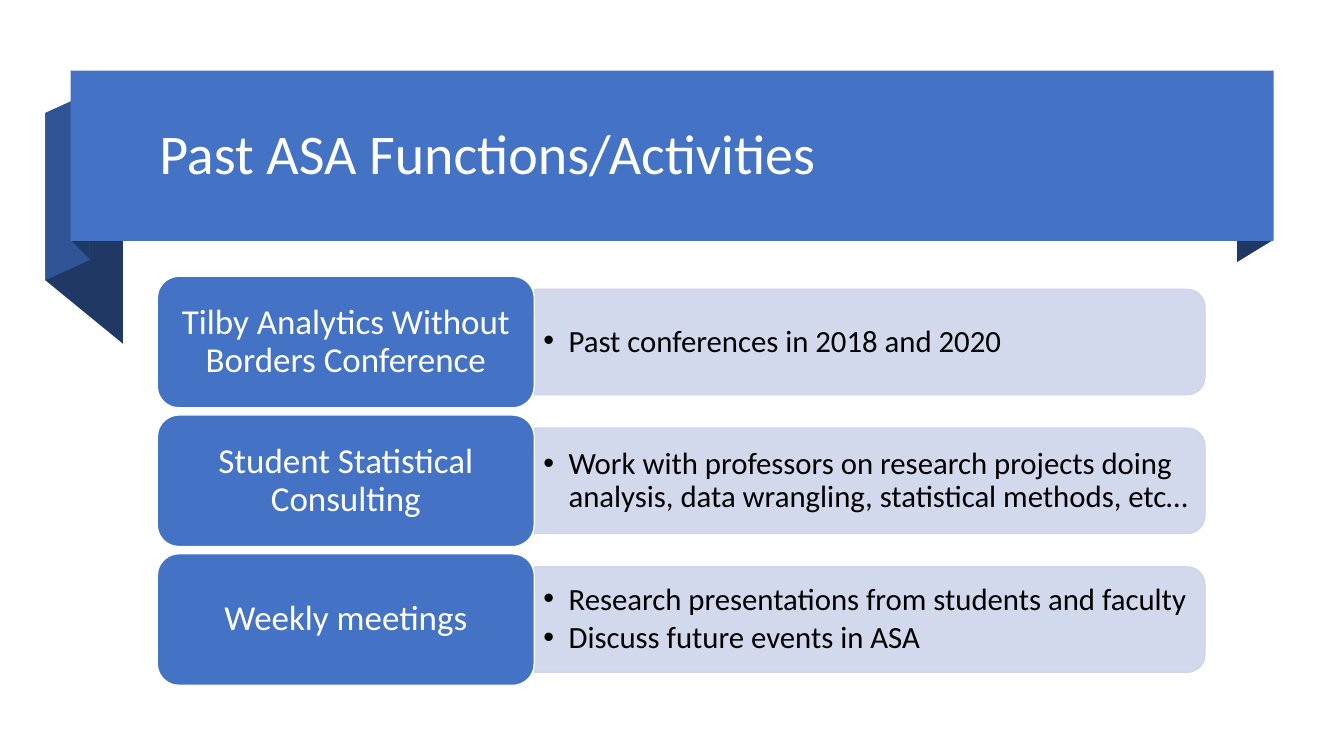
from lxml.etree import SubElement
from pptx import Presentation
from pptx.dml.color import RGBColor
from pptx.enum.shapes import MSO_SHAPE
from pptx.enum.text import MSO_ANCHOR, MSO_AUTO_SIZE, PP_ALIGN
from pptx.oxml.ns import qn
from pptx.util import Inches, Pt

BLUE = RGBColor(0x44, 0x72, 0xC4)
MID_BLUE = RGBColor(0x2F, 0x55, 0x97)
NAVY = RGBColor(0x20, 0x38, 0x64)
PALE_BLUE = RGBColor(0xCF, 0xD5, 0xEA)
WHITE = RGBColor(0xFF, 0xFF, 0xFF)
BLACK = RGBColor(0x00, 0x00, 0x00)
FONT = "Calibri"

ACTIVITIES = [
    ("Tilby Analytics Without Borders Conference",
     ["Past conferences in 2018 and 2020"]),
    ("Student Statistical Consulting",
     ["Work with professors on research projects doing analysis, "
      "data wrangling, statistical methods, etc…"]),
    ("Weekly meetings",
     ["Research presentations from students and faculty",
      "Discuss future events in ASA"]),
]


def style_shape(shape, fill, line=None):
    shape.shadow.inherit = False
    shape.fill.solid()
    shape.fill.fore_color.rgb = fill
    if line is None:
        shape.line.fill.background()
    else:
        shape.line.color.rgb = line
        shape.line.width = Pt(1)


def add_box(slide, kind, left, top, width, height, fill, line=None):
    shape = slide.shapes.add_shape(
        kind, Inches(left), Inches(top), Inches(width), Inches(height))
    style_shape(shape, fill, line)
    return shape


def prepare_frame(frame):
    frame.word_wrap = True
    frame.auto_size = MSO_AUTO_SIZE.NONE
    frame.vertical_anchor = MSO_ANCHOR.MIDDLE


def write(paragraph, text, size, color, alignment=PP_ALIGN.LEFT):
    paragraph.alignment = alignment
    paragraph.line_spacing = 0.9
    run = paragraph.add_run()
    run.text = text
    run.font.name = FONT
    run.font.size = Pt(size)
    run.font.color.rgb = color


def add_bullet(paragraph):
    properties = paragraph._p.get_or_add_pPr()
    properties.set("marL", str(Inches(0.25)))
    properties.set("indent", str(-Inches(0.25)))
    SubElement(properties, qn("a:buFont")).set("typeface", "Arial")
    SubElement(properties, qn("a:buChar")).set("char", "•")


def add_fold(slide, x, y, outer, inner, color):
    """Draw a slanted ribbon side; outer and inner are (x, top, bottom) edges."""
    corners = [(outer[0], outer[1]), (inner[0], inner[1]),
               (inner[0], inner[2]), (outer[0], outer[2])]
    points = [(Inches(x + dx), Inches(y + dy)) for dx, dy in corners]
    builder = slide.shapes.build_freeform(*points[0])
    builder.add_line_segments(points[1:], close=True)
    style_shape(builder.convert_to_shape(), color)


def add_title_ribbon(slide, text, left, top, width, height):
    # Folds behind the banner, measured from its top left corner
    add_fold(slide, left, top, (width - 0.36, 0.21, 1.9), (width, 0, 1.68), NAVY)
    add_fold(slide, left, top, (-0.25, 0.42, 2.08), (0.52, 1.05, 2.71), NAVY)
    add_fold(slide, left, top, (-0.25, 0.42, 2.08), (0.19, 0.22, 1.88), MID_BLUE)
    add_fold(slide, left, top, (0.01, 0, 1.69), (0.19, 0.19, 1.87), NAVY)

    # Banner front
    add_box(slide, MSO_SHAPE.RECTANGLE, left, top, width, height, BLUE)

    # Title
    title = slide.shapes.title
    title.left, title.top = Inches(left + 0.78), Inches(top + 0.13)
    title.width, title.height = Inches(width - 0.99), Inches(height - 0.24)
    prepare_frame(title.text_frame)
    write(title.text_frame.paragraphs[0], text, 40, WHITE)
    # Bring the title in front of the banner
    slide.shapes._spTree.append(title._element)


def add_activity(slide, name, details, left, top, width, height):
    label_width = 3.74
    panel_left, panel_width = left + label_width, width - label_width
    panel_height = 0.8 * height

    # Detail panel: a quarter turn puts its rounded corners on the right
    panel = add_box(
        slide, MSO_SHAPE.ROUND_2_SAME_RECTANGLE,
        panel_left + (panel_width - panel_height) / 2,
        top + (height - panel_width) / 2,
        panel_height, panel_width, PALE_BLUE, PALE_BLUE)
    panel.rotation = 90
    for fill_color in panel._element.spPr.findall(
            qn("a:solidFill") + "/" + qn("a:srgbClr")):
        SubElement(fill_color, qn("a:alpha")).set("val", "90000")

    # Bulleted details
    detail_box = slide.shapes.add_textbox(
        Inches(panel_left), Inches(top + 0.18),
        Inches(panel_width - 0.05), Inches(height - 0.36))
    frame = detail_box.text_frame
    prepare_frame(frame)
    frame.margin_left = frame.margin_right = Inches(0.09)
    for index, detail in enumerate(details):
        paragraph = frame.add_paragraph() if index else frame.paragraphs[0]
        write(paragraph, detail, 22, BLACK)
        paragraph.space_after = Pt(4)
        add_bullet(paragraph)

    # Activity label
    label = add_box(slide, MSO_SHAPE.ROUNDED_RECTANGLE,
                    left, top, label_width, height, BLUE, WHITE)
    prepare_frame(label.text_frame)
    write(label.text_frame.paragraphs[0], name, 25, WHITE, PP_ALIGN.CENTER)


def add_activity_list(slide, activities, left, top, width, height):
    gap = 0.07
    row_height = (height - gap * (len(activities) - 1)) / len(activities)
    for index, (name, details) in enumerate(activities):
        add_activity(slide, name, details, left,
                     top + index * (row_height + gap), width, row_height)


def main():
    presentation = Presentation()
    presentation.slide_width = Inches(13.33)
    presentation.slide_height = Inches(7.5)
    slide = presentation.slides.add_slide(presentation.slide_layouts[5])
    add_title_ribbon(slide, "Past ASA Functions/Activities", 0.7, 0.7, 11.93, 1.69)
    add_activity_list(slide, ACTIVITIES, 1.56, 2.74, 10.39, 4.06)
    presentation.save("out.pptx")


if __name__ == "__main__":
    main()
